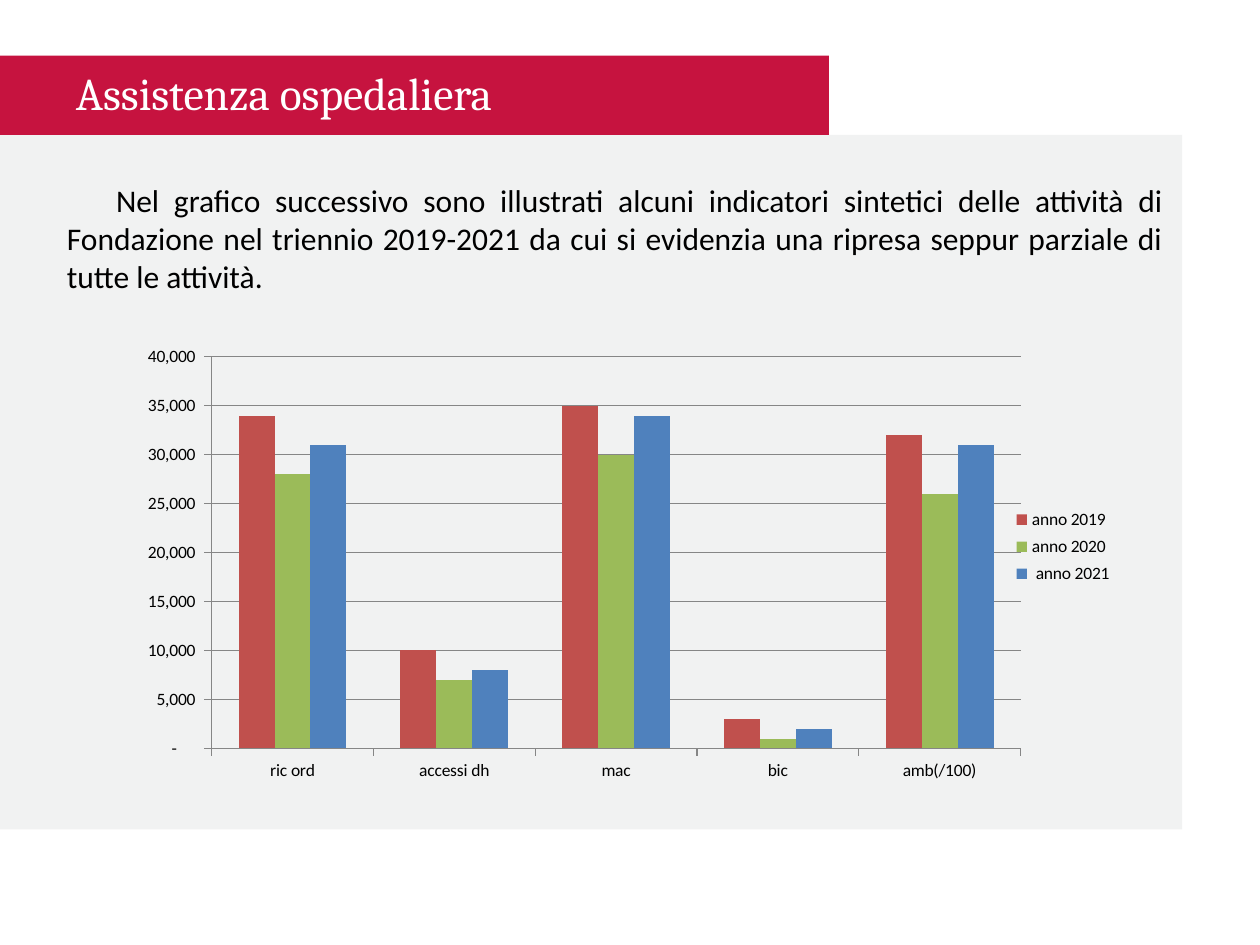
from lxml.etree import SubElement
from pptx import Presentation
from pptx.chart.data import CategoryChartData
from pptx.dml.color import RGBColor
from pptx.enum.chart import XL_CHART_TYPE, XL_LEGEND_POSITION, XL_TICK_MARK
from pptx.enum.shapes import MSO_SHAPE
from pptx.enum.text import PP_ALIGN
from pptx.oxml.ns import qn
from pptx.util import Cm, Pt

CRIMSON = RGBColor(0xC6, 0x13, 0x3F)
PALE_GREY = RGBColor(0xF1, 0xF2, 0xF2)
AXIS_GREY = RGBColor(0x86, 0x86, 0x86)
WHITE = RGBColor(0xFF, 0xFF, 0xFF)
BLACK = RGBColor(0x00, 0x00, 0x00)

CATEGORIES = ["ric ord", "accessi dh", "mac", "bic", "amb(/100)"]
YEARS = [
    ("anno 2019", [34000, 10000, 35000, 3000, 32000], RGBColor(0xC0, 0x50, 0x4D)),
    ("anno 2020", [28000, 7000, 30000, 1000, 26000], RGBColor(0x9B, 0xBB, 0x59)),
    (" anno 2021", [31000, 8000, 34000, 2000, 31000], RGBColor(0x4F, 0x81, 0xBD)),
]
NUMBER_FORMAT = '_-* #,##0_-;\\-* #,##0_-;_-* "-"??_-;_-@_'
PLOT_LAYOUT = {"layoutTarget": "inner", "xMode": "edge", "yMode": "edge",
               "x": 0.148, "y": 0.051, "w": 0.762, "h": 0.885}
LEGEND_LAYOUT = {"xMode": "edge", "yMode": "edge",
                 "x": 0.9, "y": 0.38, "w": 0.1, "h": 0.2}


def add_band(page, left, top, width, height, color):
    band = page.shapes.add_shape(
        MSO_SHAPE.RECTANGLE, Cm(left), Cm(top), Cm(width), Cm(height))
    band.shadow.inherit = False
    band.fill.solid()
    band.fill.fore_color.rgb = color
    band.line.fill.background()


def add_text(page, left, top, width, height, text, font_name, size, color):
    box = page.shapes.add_textbox(Cm(left), Cm(top), Cm(width), Cm(height))
    box.text_frame.word_wrap = True
    para = box.text_frame.paragraphs[0]
    para.text = text
    para.alignment = PP_ALIGN.JUSTIFY
    para.font.name = font_name
    para.font.size = Pt(size)
    para.font.color.rgb = color
    return box


def set_layout(part, position, settings):
    layout = part.find(qn("c:layout"))
    if layout is None:
        layout = SubElement(part, qn("c:layout"))
        part.insert(position, layout)
    manual = SubElement(layout, qn("c:manualLayout"))
    for name, value in settings.items():
        SubElement(manual, qn(f"c:{name}")).set("val", str(value))


def add_activity_chart(page, left, top, width, height):
    data = CategoryChartData(number_format="#,##0")
    data.categories = CATEGORIES
    for name, values, _ in YEARS:
        data.add_series(name, values)
    chart = page.shapes.add_chart(
        XL_CHART_TYPE.COLUMN_CLUSTERED,
        Cm(left), Cm(top), Cm(width), Cm(height), data).chart
    chart.has_title = False
    chart.font.name = "Calibri"
    chart.font.size = Pt(10)
    chart.font.color.rgb = BLACK

    # Columns
    plot = chart.plots[0]
    plot.vary_by_categories = False
    plot.gap_width = 150
    plot.overlap = 0
    for series, (_, _, color) in zip(plot.series, YEARS):
        series.format.fill.solid()
        series.format.fill.fore_color.rgb = color

    # Axes
    value_axis = chart.value_axis
    value_axis.minimum_scale = 0
    value_axis.maximum_scale = 40000
    value_axis.major_unit = 5000
    value_axis.has_major_gridlines = True
    value_axis.tick_labels.number_format = NUMBER_FORMAT
    value_axis.tick_labels.number_format_is_linked = False
    for axis in (chart.category_axis, value_axis):
        axis.major_tick_mark = XL_TICK_MARK.OUTSIDE
    for ruled in (chart.category_axis, value_axis, value_axis.major_gridlines):
        ruled.format.line.color.rgb = AXIS_GREY
        ruled.format.line.width = Pt(0.75)

    # Legend and plot placement
    chart.has_legend = True
    chart.legend.position = XL_LEGEND_POSITION.RIGHT
    chart.legend.include_in_layout = False
    set_layout(plot._element.getparent(), 0, PLOT_LAYOUT)
    set_layout(chart.legend._element, 1, LEGEND_LAYOUT)


def main():
    deck = Presentation()
    deck.slide_width, deck.slide_height = Cm(25.4), Cm(19.05)
    page = deck.slides.add_slide(deck.slide_layouts[6])

    # Background panel and title band
    add_band(page, 0, 2.72, 23.83, 14, PALE_GREY)
    add_band(page, -0.13, 1.12, 16.84, 1.6, CRIMSON)

    # Title
    title = add_text(page, 1.3, 1.12, 13.06, 1.09,
                     "Assistenza ospedaliera", "Cambria", 26, WHITE)
    title.text_frame.margin_left = title.text_frame.margin_right = Cm(0.23)
    title.text_frame.margin_top = Cm(0.2)
    title.text_frame.margin_bottom = Cm(0.1)

    # Introduction with a first-line indent
    intro = add_text(
        page, 1.1, 3.53, 22.6, 13.41,
        "Nel grafico successivo sono illustrati alcuni indicatori sintetici delle "
        "attività di Fondazione nel triennio 2019-2021 da cui si evidenzia una "
        "ripresa seppur parziale di tutte le attività.", "Calibri", 18, BLACK)
    properties = intro.text_frame.paragraphs[0]._p.get_or_add_pPr()
    properties.set("marL", "0")
    properties.set("indent", str(Cm(0.99)))

    add_activity_chart(page, 1.1, 6.74, 21.4, 8.99)
    deck.save("out.pptx")


if __name__ == "__main__":
    main()
